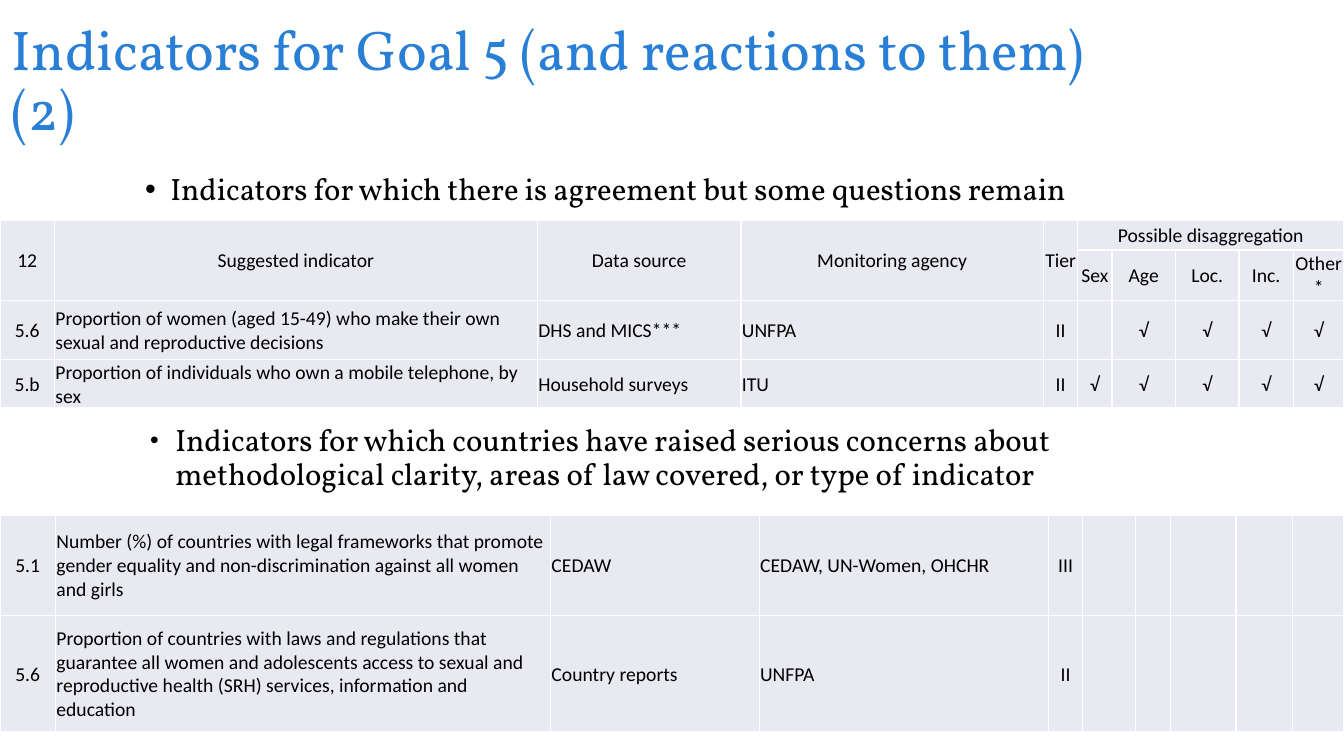
from dataclasses import dataclass

from lxml import etree
from pptx import Presentation, util as u
from pptx.dml.color import RGBColor
from pptx.enum import text
from pptx.oxml import ns

TITLE = "Indicators for Goal 5 (and reactions to them) (2)"
TITLE_BOX = (0.02, 0.09, 11.5, 1.45)

# (wording, box, bullet size in percent of the text)
BULLETS = [
    ("Indicators for which there is agreement but some questions remain",
     (1.34, 1.68, 9.65, 3.96), 100),
    ("Indicators for which countries have raised serious concerns about "
     "methodological clarity, areas of law covered, or type of indicator",
     (1.39, 4.17, 10.54, 3.96), 80),
]

AGREED = {
    "top": 2.19,
    "columns": [0.54, 4.79, 2.02, 3, 0.34, 0.34, 0.63, 0.63, 0.54, 0.5],
    "heights": [0.29, 0.5, 0.59, 0.47],
    "header_rows": 2,
    "rows": [
        ["12", "Suggested indicator", "Data source", "Monitoring agency", "Tier",
         "Possible disaggregation"],
        ["", "", "", "", "", "Sex", "Age", "Loc.", "Inc.", "Other*"],
        ["5.6", "Proportion of women (aged 15-49) who make their own sexual and "
         "reproductive decisions", "DHS and MICS***", "UNFPA", "II",
         "", "√", "√", "√", "√"],
        ["5.b", "Proportion of individuals who own a mobile telephone, by sex",
         "Household surveys", "ITU", "II", "√", "√", "√", "√", "√"],
    ],
    # (first row, first column, last row, last column)
    "merges": [(0, column, 1, column) for column in range(5)] + [(0, 5, 0, 9)],
}
CONCERNS = {
    "top": 5.11,
    "columns": [0.55, 4.91, 2.07, 2.87, 0.34, 0.52, 0.35, 0.65, 0.56, 0.51],
    "heights": [1, 1.15],
    "header_rows": 0,
    "rows": [
        ["5.1", "Number (%) of countries with legal frameworks that promote gender "
         "equality and non-discrimination against all women and girls",
         "CEDAW", "CEDAW, UN-Women, OHCHR", "III"],
        ["5.6", "Proportion of countries with laws and regulations that guarantee "
         "all women and adolescents access to sexual and reproductive health (SRH) "
         "services, information and education", "Country reports", "UNFPA", "II"],
    ],
    "merges": [],
}
LEFT_ALIGNED_COLUMNS = (1, 2, 3)


@dataclass(frozen=True)
class Theme:
    heading_font: str = "Vollkorn"
    table_font: str = "Calibri"
    title_size: int = 40
    bullet_size: int = 22
    table_size: int = 14
    blue: str = "297FD5"
    black: str = "000000"
    cell: str = "E9EAF1"
    border: str = "FFFFFF"


THEME = Theme()


def style_runs(paragraph, font, size, color):
    for run in paragraph.runs:
        run.font.name = font
        run.font.size = u.Pt(size)
        run.font.color.rgb = RGBColor.from_string(color)


def add_heading(slide, wording, box, size, color):
    shape = slide.shapes.add_textbox(*map(u.Inches, box))
    frame = shape.text_frame
    frame.word_wrap = True
    frame.text = wording
    paragraph = frame.paragraphs[0]
    paragraph.line_spacing = 0.9
    style_runs(paragraph, THEME.heading_font, size, color)
    return frame


def add_bullet(paragraph, percent):
    paragraph.space_before = u.Pt(10)
    properties = paragraph._p.get_or_add_pPr()
    properties.set("marL", str(u.Inches(0.25)))
    properties.set("indent", str(-u.Inches(0.25)))
    for tag, name, value in (("a:buSzPct", "val", str(percent * 1000)),
                             ("a:buFont", "typeface", "Arial"),
                             ("a:buChar", "char", "•")):
        etree.SubElement(properties, ns.qn(tag)).set(name, value)


def add_borders(cell):
    properties = cell._tc.get_or_add_tcPr()
    for side in ("a:lnL", "a:lnR", "a:lnT", "a:lnB"):
        line = etree.SubElement(properties, ns.qn(side), w=str(u.Pt(1)))
        fill = etree.SubElement(line, ns.qn("a:solidFill"))
        etree.SubElement(fill, ns.qn("a:srgbClr"), val=THEME.border)


def fill_cell(cell, wording, centred):
    add_borders(cell)
    cell.fill.solid()
    cell.fill.fore_color.rgb = RGBColor.from_string(THEME.cell)
    cell.margin_left = cell.margin_right = cell.margin_top = u.Inches(0.01)
    cell.margin_bottom = 0
    cell.vertical_anchor = text.MSO_ANCHOR.MIDDLE
    cell.text_frame.text = wording
    paragraph = cell.text_frame.paragraphs[0]
    paragraph.alignment = text.PP_ALIGN.CENTER if centred else text.PP_ALIGN.LEFT
    style_runs(paragraph, THEME.table_font, THEME.table_size, THEME.black)
    # An empty cell takes its line height from the end-of-paragraph size.
    paragraph._p.get_or_add_endParaRPr().set("sz", str(THEME.table_size * 100))


def add_indicator_table(slide, content):
    columns, heights = content["columns"], content["heights"]
    table = slide.shapes.add_table(
        len(heights), len(columns), 0, u.Inches(content["top"]),
        u.Inches(sum(columns)), u.Inches(sum(heights))).table
    table.first_row = table.horz_banding = False
    for column, width in zip(table.columns, columns):
        column.width = u.Inches(width)
    for row, height in zip(table.rows, heights):
        row.height = u.Inches(height)
    for row_index, wordings in enumerate(content["rows"]):
        for column_index in range(len(columns)):
            wording = wordings[column_index] if column_index < len(wordings) else ""
            centred = (row_index < content["header_rows"]
                       or column_index not in LEFT_ALIGNED_COLUMNS)
            fill_cell(table.cell(row_index, column_index), wording, centred)
    for top, left, bottom, right in content["merges"]:
        table.cell(top, left).merge(table.cell(bottom, right))


def main():
    presentation = Presentation()
    presentation.slide_width = u.Inches(13.33)
    presentation.slide_height = u.Inches(7.5)
    slide = presentation.slides.add_slide(presentation.slide_layouts[6])

    title = add_heading(slide, TITLE, TITLE_BOX, THEME.title_size, THEME.blue)
    title.vertical_anchor = text.MSO_ANCHOR.MIDDLE
    for (wording, box, percent), content in zip(BULLETS, (AGREED, CONCERNS)):
        frame = add_heading(slide, wording, box, THEME.bullet_size, THEME.black)
        add_bullet(frame.paragraphs[0], percent)
        add_indicator_table(slide, content)

    presentation.save("out.pptx")


if __name__ == "__main__":
    main()
